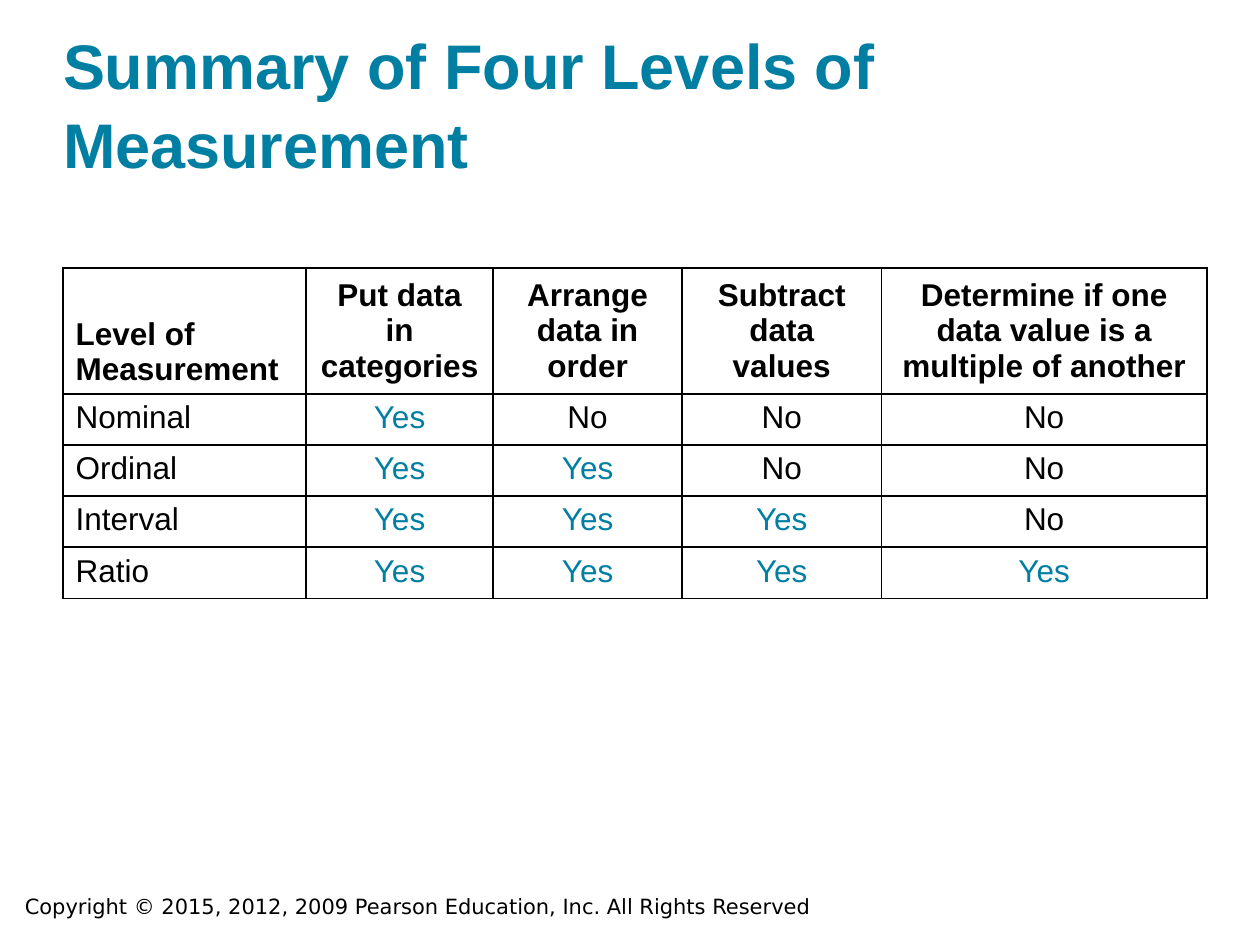
from dataclasses import dataclass

from lxml.etree import SubElement
from pptx import Presentation
from pptx.dml.color import RGBColor
from pptx.enum.text import MSO_ANCHOR, MSO_AUTO_SIZE, PP_ALIGN
from pptx.oxml.ns import qn
from pptx.slide import Slide
from pptx.table import _Cell
from pptx.text.text import TextFrame
from pptx.util import Cm, Pt


@dataclass(frozen=True)
class Theme:
    accent: str = "007FA3"
    ink: str = "000000"
    paper: str = "FFFFFF"
    font: str = "Arial"
    footer_font: str = "DejaVu Sans"
    title_size: int = 36
    table_size: int = 18
    footer_size: int = 12
    border_width: int = 1


@dataclass(frozen=True)
class Column:
    heading: str
    width: float


@dataclass(frozen=True)
class Level:
    name: str
    abilities: int  # how many of the operations, from the left, apply


THEME = Theme()
COLUMNS = [
    Column("Level of\nMeasurement", 4.9),
    Column("Put data\nin\ncategories", 3.77),
    Column("Arrange\ndata in\norder", 3.81),
    Column("Subtract\ndata\nvalues", 4.02),
    Column("Determine if one data value is a multiple of another", 6.56),
]
LEVELS = [
    Level("Nominal", 1),
    Level("Ordinal", 2),
    Level("Interval", 3),
    Level("Ratio", 4),
]
HEADER_HEIGHT = 2.38
ROW_HEIGHT = 1.03


def write_text(
    frame: TextFrame,
    text: str,
    *,
    size: int,
    color: str = THEME.ink,
    font: str = THEME.font,
    bold: bool = False,
    align: PP_ALIGN = PP_ALIGN.LEFT,
    line_spacing: float = 1.0,
) -> None:
    """Fill the frame with one paragraph per line of text."""
    frame.text = text
    frame.word_wrap = True
    for paragraph in frame.paragraphs:
        paragraph.alignment = align
        paragraph.line_spacing = line_spacing
        paragraph.font.name = font
        paragraph.font.size = Pt(size)
        paragraph.font.bold = bold
        paragraph.font.color.rgb = RGBColor.from_string(color)


def style_cell(cell: _Cell) -> None:
    properties = cell._tc.get_or_add_tcPr()
    for side in ("lnL", "lnR", "lnT", "lnB"):
        line = SubElement(properties, qn(f"a:{side}"), w=str(Pt(THEME.border_width)))
        fill = SubElement(line, qn("a:solidFill"))
        SubElement(fill, qn("a:srgbClr"), val=THEME.ink)
    cell.fill.solid()
    cell.fill.fore_color.rgb = RGBColor.from_string(THEME.paper)


def add_title(slide: Slide, text: str) -> None:
    title = slide.shapes.title
    title.left, title.top, title.width, title.height = Cm(1.27), Cm(0.61), Cm(22.86), Cm(3.05)
    frame = title.text_frame
    frame.auto_size = MSO_AUTO_SIZE.NONE
    frame.vertical_anchor = MSO_ANCHOR.BOTTOM
    frame.margin_left = frame.margin_right = frame.margin_top = frame.margin_bottom = 0
    write_text(frame, text, size=THEME.title_size, color=THEME.accent, bold=True, line_spacing=1.05)


def add_level_table(slide: Slide) -> None:
    width = sum(column.width for column in COLUMNS)
    height = HEADER_HEIGHT + ROW_HEIGHT * len(LEVELS)
    table = slide.shapes.add_table(
        len(LEVELS) + 1, len(COLUMNS), Cm(1.27), Cm(5.4), Cm(width), Cm(height)
    ).table
    table.horz_banding = False

    for row in table.rows:
        row.height = Cm(ROW_HEIGHT)
    table.rows[0].height = Cm(HEADER_HEIGHT)

    for index, column in enumerate(COLUMNS):
        table.columns[index].width = Cm(column.width)
        align = PP_ALIGN.CENTER if index else PP_ALIGN.LEFT
        header = table.cell(0, index)
        style_cell(header)
        header.vertical_anchor = MSO_ANCHOR.MIDDLE if index else MSO_ANCHOR.BOTTOM
        write_text(header.text_frame, column.heading, size=THEME.table_size, bold=True, align=align)

        for row_index, level in enumerate(LEVELS, start=1):
            applies = 0 < index <= level.abilities
            answer = "Yes" if applies else "No"
            cell = table.cell(row_index, index)
            style_cell(cell)
            write_text(
                cell.text_frame,
                answer if index else level.name,
                size=THEME.table_size,
                color=THEME.accent if applies else THEME.ink,
                align=align,
            )


def add_copyright(slide: Slide, text: str) -> None:
    box = slide.shapes.add_textbox(Cm(0.25), Cm(17.88), Cm(19.89), Cm(0.76))
    write_text(box.text_frame, text, size=THEME.footer_size, font=THEME.footer_font)


def main() -> None:
    presentation = Presentation()
    presentation.slide_width, presentation.slide_height = Cm(25.4), Cm(19.05)
    slide = presentation.slides.add_slide(presentation.slide_layouts[5])
    add_copyright(slide, "Copyright © 2015, 2012, 2009 Pearson Education, Inc. All Rights Reserved")
    add_title(slide, "Summary of Four Levels of Measurement")
    add_level_table(slide)
    presentation.save("out.pptx")


if __name__ == "__main__":
    main()
